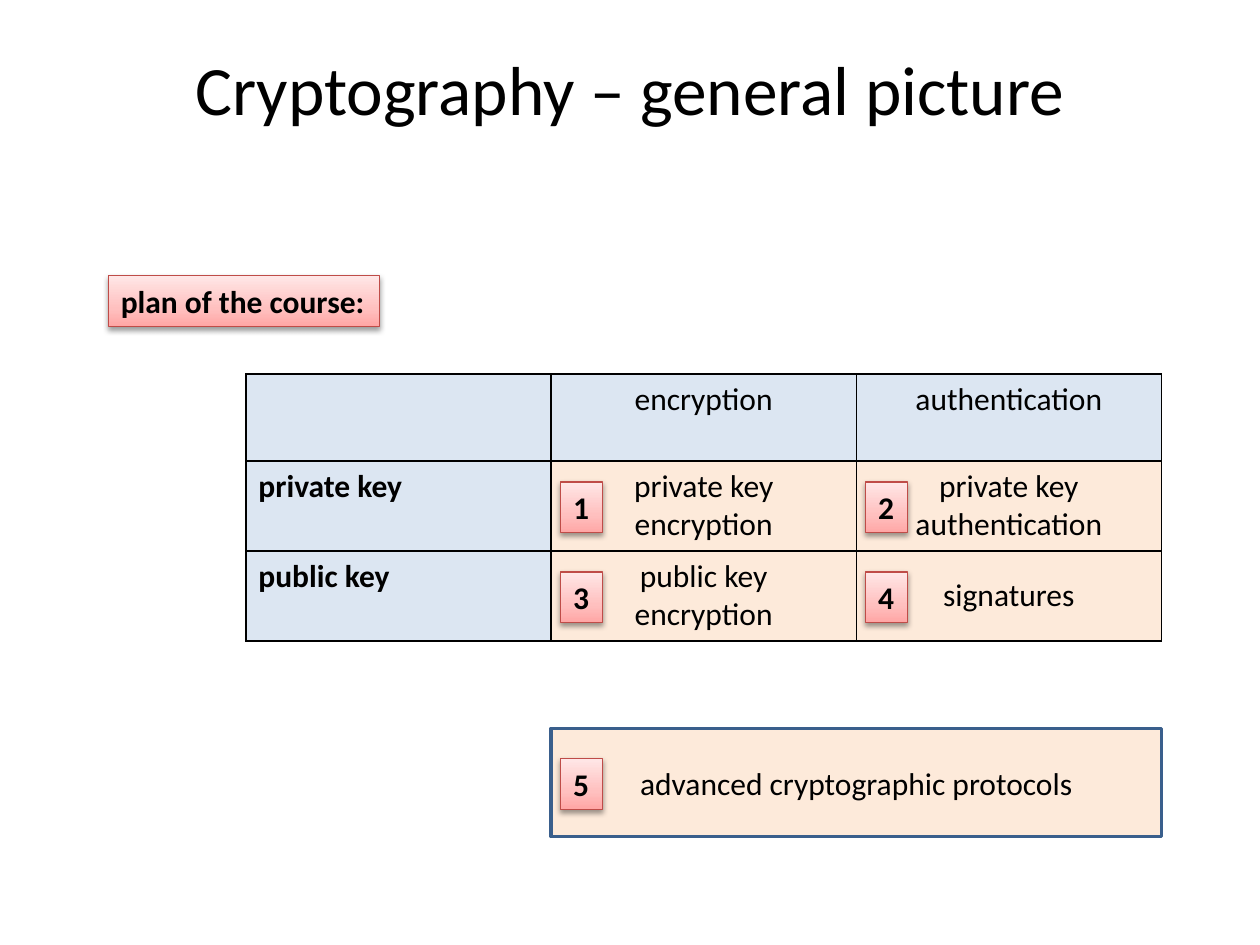
"""Build the slide giving the general picture of cryptography and the course plan."""
from pptx import Presentation
from pptx.dml.color import RGBColor
from pptx.enum import shapes, text
from pptx.oxml import parse_xml
from pptx.oxml.ns import nsdecls
from pptx.util import Pt

COLORS = {"black": "000000", "header": "DCE6F2", "topic": "FDEADA",
          "box line": "3A5F8C", "label line": "BF4C48"}
GRADIENT = [(0, "FFA6A5"), (35, "FFC0BF"), (100, "FFE7E7")]
TITLE = "Cryptography – general picture"
PLAN = "plan of the course:"
GRID = [
    ["", "encryption", "authentication"],
    ["private key", "private key encryption", "private key authentication"],
    ["public key", "public key\nencryption", "signatures"],
]
ADVANCED = "advanced cryptographic protocols"

LEFT, TOP, COLUMN = 140.5, 213.7, 174.4
ROWS = [49.7, 51.4, 51.4]
BOX_TOP, BOX_HEIGHT = 416.2, 61.9
LABEL_HEIGHT, BADGE_WIDTH, BADGE_INSET = 29, 23.8, 5.5


def color(name):
    return RGBColor.from_string(COLORS[name])


def write(frame, content, size=18, bold=False, align=text.PP_ALIGN.CENTER,
          anchor=text.MSO_ANCHOR.MIDDLE, wrap=True):
    frame.word_wrap = wrap
    frame.vertical_anchor = anchor
    paragraph = frame.paragraphs[0]
    paragraph.text = content
    paragraph.alignment = align
    for run in paragraph.runs:
        run.font.name = "Calibri"
        run.font.size = Pt(size)
        run.font.bold = bold
        run.font.color.rgb = color("black")


def add_rectangle(slide, left, top, width, height):
    return slide.shapes.add_shape(shapes.MSO_SHAPE.RECTANGLE,
                                  Pt(left), Pt(top), Pt(width), Pt(height))


def add_label(slide, content, left, top, width):
    shape = add_rectangle(slide, left, top, width, LABEL_HEIGHT)
    properties = shape._element.spPr
    stops = "".join(f'<a:gs pos="{position * 1000}"><a:srgbClr val="{value}"/></a:gs>'
                    for position, value in GRADIENT)
    properties.append(parse_xml(
        f'<a:gradFill {nsdecls("a")} rotWithShape="1"><a:gsLst>{stops}</a:gsLst>'
        '<a:lin ang="16200000" scaled="0"/></a:gradFill>'))
    shape.line.color.rgb = color("label line")
    shape.line.width = Pt(0.75)
    properties.append(parse_xml(
        f'<a:effectLst {nsdecls("a")}><a:outerShdw blurRad="{Pt(3.1)}" dist="{Pt(1.6)}" '
        'dir="5400000" rotWithShape="0"><a:srgbClr val="000000"><a:alpha val="38000"/>'
        '</a:srgbClr></a:outerShdw></a:effectLst>'))
    write(shape.text_frame, content, bold=True, align=text.PP_ALIGN.LEFT,
          anchor=text.MSO_ANCHOR.TOP, wrap=False)


def add_borders(cell):
    properties = cell._tc.get_or_add_tcPr()
    for index, side in enumerate("LRTB"):
        properties.insert(index, parse_xml(
            f'<a:ln{side} {nsdecls("a")} w="{Pt(1)}"><a:solidFill>'
            f'<a:srgbClr val="{COLORS["black"]}"/></a:solidFill></a:ln{side}>'))


def add_grid(slide):
    frame = slide.shapes.add_table(len(ROWS), len(GRID[0]), Pt(LEFT), Pt(TOP),
                                   Pt(COLUMN * len(GRID[0])), Pt(sum(ROWS)))
    table = frame.table
    for column in table.columns:
        column.width = Pt(COLUMN)
    for r, (height, entries) in enumerate(zip(ROWS, GRID)):
        table.rows[r].height = Pt(height)
        for c, entry in enumerate(entries):
            cell = table.cell(r, c)
            topic = r > 0 and c > 0
            cell.fill.solid()
            cell.fill.fore_color.rgb = color("topic" if topic else "header")
            add_borders(cell)
            write(cell.text_frame, entry, bold=c == 0,
                  align=text.PP_ALIGN.CENTER if c else text.PP_ALIGN.LEFT)
            cell.vertical_anchor = text.MSO_ANCHOR.MIDDLE if topic else text.MSO_ANCHOR.TOP


def add_advanced_box(slide):
    box = add_rectangle(slide, LEFT + COLUMN, BOX_TOP, 2 * COLUMN, BOX_HEIGHT)
    box.shadow.inherit = False
    box.fill.solid()
    box.fill.fore_color.rgb = color("topic")
    box.line.color.rgb = color("box line")
    box.line.width = Pt(2)
    write(box.text_frame, ADVANCED)


def add_badges(slide):
    row_centers = [TOP + sum(ROWS[:r]) + ROWS[r] / 2 for r in (1, 2)]
    places = [(column, center) for center in row_centers for column in (1, 2)]
    places.append((1, BOX_TOP + BOX_HEIGHT / 2))
    for number, (column, center) in enumerate(places, 1):
        add_label(slide, str(number), LEFT + column * COLUMN + BADGE_INSET,
                  center - LABEL_HEIGHT / 2 + 0.8, BADGE_WIDTH)


def main():
    presentation = Presentation()
    presentation.slide_width, presentation.slide_height = Pt(720), Pt(540)
    slide = presentation.slides.add_slide(presentation.slide_layouts[6])
    title = slide.shapes.add_textbox(Pt(36), Pt(21.6), Pt(648), Pt(57))
    write(title.text_frame, TITLE, size=39.6)
    add_grid(slide)
    add_advanced_box(slide)
    add_badges(slide)
    add_label(slide, PLAN, 62, 157.5, 155)
    presentation.save("out.pptx")


if __name__ == "__main__":
    main()
